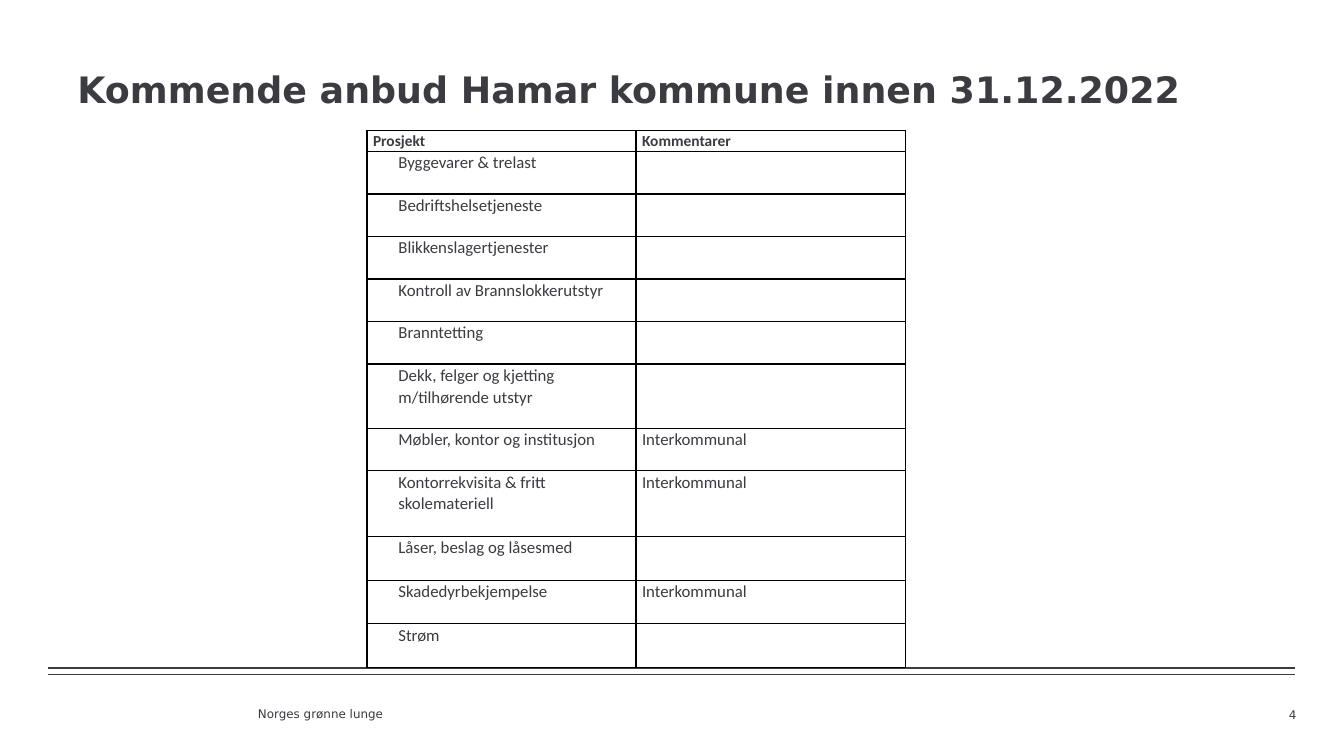
from dataclasses import dataclass

from lxml.etree import SubElement
from pptx import Presentation
from pptx.dml.color import RGBColor as Rgb
from pptx.enum.shapes import MSO_CONNECTOR as Link
from pptx.enum.text import MSO_ANCHOR as Anchor, PP_ALIGN as Align
from pptx.oxml.ns import qn
from pptx.util import Cm, Pt


@dataclass(frozen=True)
class Theme:
    ink: str = "3B3B42"
    edge: str = "000000"
    sans: str = "DejaVu Sans"
    body: str = "Calibri"
    title: float = 26
    head: float = 11
    item: float = 12
    small: float = 8.5


def apply(target, values):
    for name, value in values.items():
        setattr(target, name, value)


class Page:
    def __init__(self, deck, theme):
        self.theme = theme
        self.slide = deck.slides.add_slide(deck.slide_layouts[6])

    def fill_text(self, frame, text, font, para):
        par = frame.paragraphs[0]
        run = par.add_run()
        run.text = text
        apply(par, para)
        apply(run.font, font)
        run.font.color.rgb = Rgb.from_string(self.theme.ink)

    def label(self, box, text, size, bold=False, anchor=Anchor.TOP, **para):
        shape = self.slide.shapes.add_textbox(*map(Cm, box))
        frame = shape.text_frame
        apply(frame, {"word_wrap": True, "vertical_anchor": anchor})
        font = {"name": self.theme.sans, "size": Pt(size), "bold": bold}
        self.fill_text(frame, text, font, para)

    def rule(self, left, right, top, width):
        line = self.slide.shapes.add_connector(
            Link.STRAIGHT, Cm(left), Cm(top), Cm(right), Cm(top))
        line.line.width = Pt(width)
        line.line.color.rgb = Rgb.from_string(self.theme.ink)
        SubElement(line._element.spPr, qn("a:effectLst"))

    def frame(self, cell):
        """Draw the four borders of a cell and clear its fill."""
        props = cell._tc.get_or_add_tcPr()
        for side in ("lnL", "lnR", "lnT", "lnB"):
            edge = SubElement(props, qn(f"a:{side}"), w=str(Pt(1)))
            fill = SubElement(edge, qn("a:solidFill"))
            SubElement(fill, qn("a:srgbClr"), val=self.theme.edge)
        cell.fill.background()

    def grid(self, left, top, wide, rows):
        """Build the table from (height, project, comment) rows; row 0 is the head."""
        theme = self.theme
        tall = sum(row[0] for row in rows)
        table = self.slide.shapes.add_table(
            len(rows), 2, Cm(left), Cm(top), Cm(2 * wide), Cm(tall)).table
        apply(table, {"first_row": False, "horz_banding": False})
        for y, (height, *texts) in enumerate(rows):
            table.rows[y].height = Cm(height)
            head = y == 0
            font = {"name": theme.body, "bold": head,
                    "size": Pt(theme.head if head else theme.item)}
            for x, text in enumerate(texts):
                cell = table.cell(y, x)
                apply(cell, {"margin_left": Cm(0.15), "margin_right": Cm(0.15),
                             "margin_top": 0, "margin_bottom": 0})
                self.frame(cell)
                if not text:
                    continue
                self.fill_text(cell.text_frame, text, font, {"line_spacing": 1.07})
                if x == 0 and not head:
                    props = cell.text_frame.paragraphs[0]._p.get_or_add_pPr()
                    props.set("marL", str(Cm(0.64)))
                    props.set("indent", "0")


JOINT = "Interkommunal"
ROWS = [
    (0.54, "Prosjekt", "Kommentarer"),
    (1.07, "Byggevarer & trelast", ""),
    (1.07, "Bedriftshelsetjeneste", ""),
    (1.07, "Blikkenslagertjenester", ""),
    (1.07, "Kontroll av Brannslokkerutstyr", ""),
    (1.07, "Branntetting", ""),
    (1.62, "Dekk, felger og kjetting m/tilhørende utstyr", ""),
    (1.07, "Møbler, kontor og institusjon", JOINT),
    (1.66, "Kontorrekvisita & fritt skolemateriell", JOINT),
    (1.1, "Låser, beslag og låsesmed", ""),
    (1.1, "Skadedyrbekjempelse", JOINT),
    (1.1, "Strøm", ""),
]


def main():
    deck = Presentation()
    apply(deck, {"slide_width": Cm(33.87), "slide_height": Cm(19.05)})
    theme = Theme()
    page = Page(deck, theme)
    page.label((6.25, 17.48, 4.45, 1.02), "Norges grønne lunge", theme.small,
               anchor=Anchor.MIDDLE)
    for top, width in ((16.84, 1.25), (16.99, 0.25)):
        page.rule(1.22, 32.64, top, width)
    page.label((1.7, 1.7, 30.33, 2.13),
               "Kommende anbud Hamar kommune innen 31.12.2022",
               theme.title, bold=True, line_spacing=0.9)
    page.label((25.3, 17.7, 7.62, 1.02), "4", theme.small, alignment=Align.RIGHT)
    page.grid(9.25, 3.28, 6.78, ROWS)
    deck.save("out.pptx")


if __name__ == "__main__":
    main()
